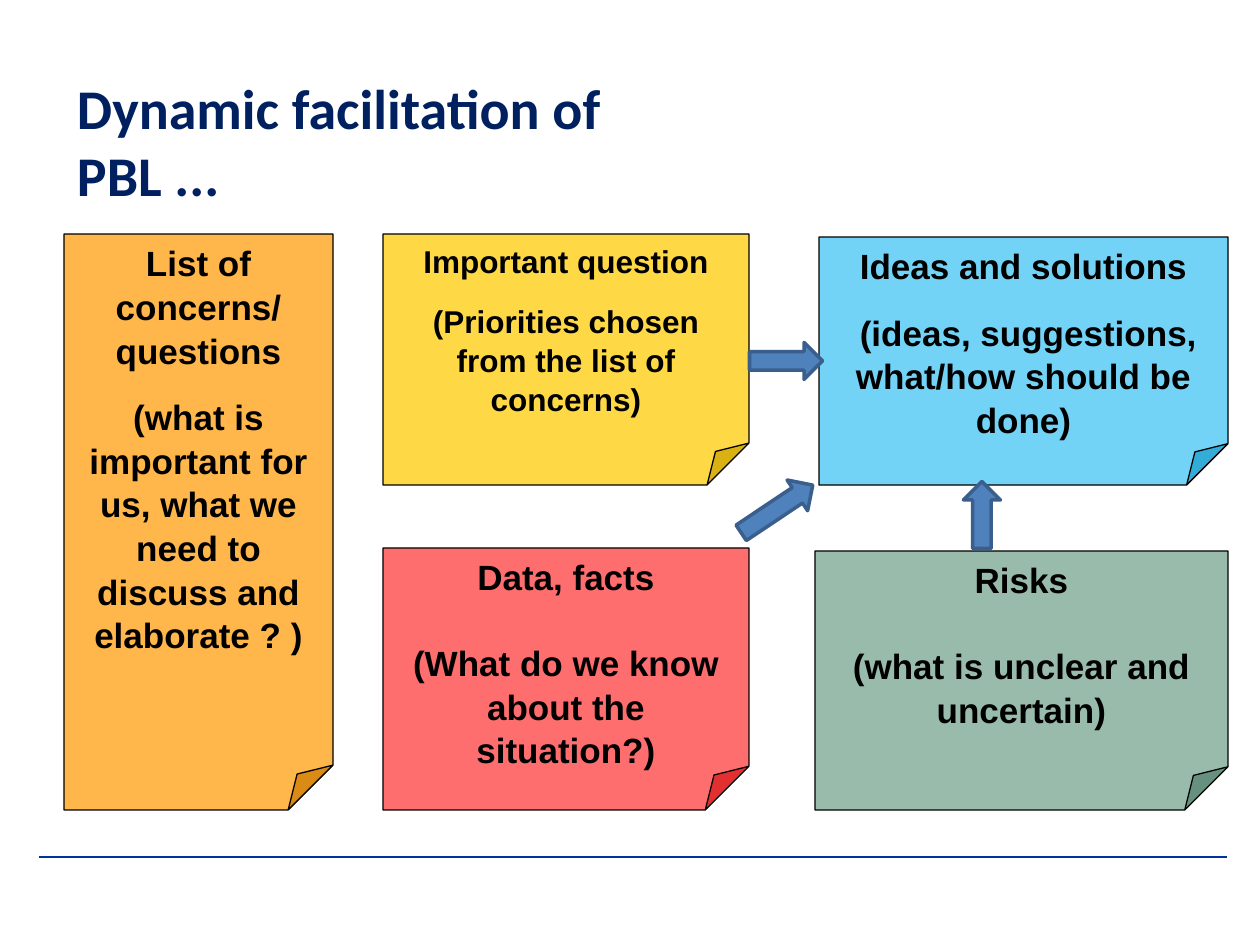
"""Build the slide on dynamic facilitation of problem-based learning."""
from dataclasses import dataclass

from lxml import etree
from pptx import Presentation
from pptx import util as u
from pptx.dml.color import RGBColor
from pptx.enum import shapes, text
from pptx.oxml.ns import qn

PX_PER_INCH = 126


def px(length):
    return u.Emu(round(length * u.Inches(1) / PX_PER_INCH))


@dataclass(frozen=True)
class Theme:
    title_font: str = "Calibri"
    body_font: str = "Arial"
    title_size: int = 32
    note_size: int = 20
    small_size: int = 18
    note_spacing: float = 1.04
    title: str = "002060"
    ink: str = "000000"
    rule: str = "003399"
    arrow: str = "4F81BD"
    arrow_edge: str = "3A5F8C"
    orange: str = "FF9900"
    yellow: str = "FFCC00"
    red: str = "FF0000"
    green: str = "669A82"
    blue: str = "00B0F0"


THEME = Theme()


def write(para, words, *, font, size, color, align, before=0, spacing=None):
    para.alignment = align
    para.line_spacing = spacing
    if before:
        para.space_before = u.Pt(before)
    span = para.add_run()
    span.text = words
    span.font.name = font
    span.font.size = u.Pt(size)
    span.font.bold = True
    span.font.color.rgb = RGBColor.from_string(color)


class Board:
    def __init__(self, slide, theme):
        self.slide = slide
        self.theme = theme

    def title(self, words, left, top, width, height):
        box = self.slide.shapes.title
        box.left, box.top, box.width, box.height = map(px, (left, top, width, height))
        frame = box.text_frame
        frame.word_wrap = True
        frame.auto_size = text.MSO_AUTO_SIZE.NONE
        frame.vertical_anchor = text.MSO_ANCHOR.TOP
        frame.margin_left = frame.margin_right = px(9)
        frame.margin_top = frame.margin_bottom = px(5)
        write(frame.paragraphs[0], words, font=self.theme.title_font,
              size=self.theme.title_size, color=self.theme.title,
              align=text.PP_ALIGN.LEFT)

    def rule(self, left, right, y):
        line = self.slide.shapes.add_connector(
            shapes.MSO_CONNECTOR.STRAIGHT, px(left), px(y), px(right), px(y))
        line.line.color.rgb = RGBColor.from_string(self.theme.rule)
        line.line.width = u.Pt(0.75)
        etree.SubElement(line._element.spPr, qn("a:effectLst"))

    def shape(self, kind, frame, fill, edge, weight):
        box = self.slide.shapes.add_shape(kind, *map(px, frame))
        box.shadow.inherit = False
        box.fill.solid()
        box.fill.fore_color.rgb = RGBColor.from_string(fill)
        box.line.color.rgb = RGBColor.from_string(edge)
        box.line.width = u.Pt(weight)
        return box

    def note(self, frame, fill, opacity, lines, gap, size):
        box = self.shape(shapes.MSO_SHAPE.FOLDED_CORNER, frame, fill, self.theme.ink, 0.75)
        color = box._element.spPr.find(qn("a:solidFill"))[0]
        etree.SubElement(color, qn("a:alpha"), val=str(opacity * 1000))
        body = box.text_frame
        body.word_wrap = True
        body.vertical_anchor = text.MSO_ANCHOR.TOP
        for index, words in enumerate(lines):
            para = body.paragraphs[0] if index == 0 else body.add_paragraph()
            write(para, words, font=self.theme.body_font, size=size,
                  color=self.theme.ink, align=text.PP_ALIGN.CENTER,
                  before=gap if index == len(lines) - 1 else 0,
                  spacing=self.theme.note_spacing)

    def arrow(self, center_x, center_y, length, angle=0):
        width = 37
        frame = (center_x - width / 2, center_y - length / 2, width, length)
        box = self.shape(shapes.MSO_SHAPE.UP_ARROW, frame, self.theme.arrow,
                         self.theme.arrow_edge, 2)
        box.rotation = angle


def main():
    deck = Presentation()
    deck.slide_width, deck.slide_height = u.Inches(10), u.Inches(7.5)
    board = Board(deck.slides.add_slide(deck.slide_layouts[5]), THEME)
    board.rule(39, 1227, 857)
    large, small = THEME.note_size, THEME.small_size
    notes = [
        ((64, 234, 269, 576), THEME.orange, 71,
         ["List of concerns/", "questions",
          "(what is important for us, what we need to discuss and elaborate ? )"], 13, large),
        ((383, 234, 366, 251), THEME.yellow, 73,
         ["Important question", "(Priorities chosen from the list of concerns)"], 12, small),
        ((383, 548, 366, 262), THEME.red, 57,
         ["Data, facts", "(What do we know about the situation?)"], 24, large),
        ((815, 551, 413, 259), THEME.green, 67,
         ["Risks", "(what is unclear and uncertain)"], 24, large),
        ((819, 237, 409, 248), THEME.blue, 55,
         ["Ideas and solutions", " (ideas, suggestions, what/how should be done)"], 13, large),
    ]
    for note in notes:
        board.note(*note)
    board.title("Dynamic facilitation of PBL ...", 68, 68, 635, 67)
    board.arrow(786, 361, 73, 90)
    board.arrow(982, 515, 67)
    board.arrow(777, 509, 86, 56.3)
    deck.save("out.pptx")


if __name__ == "__main__":
    main()
